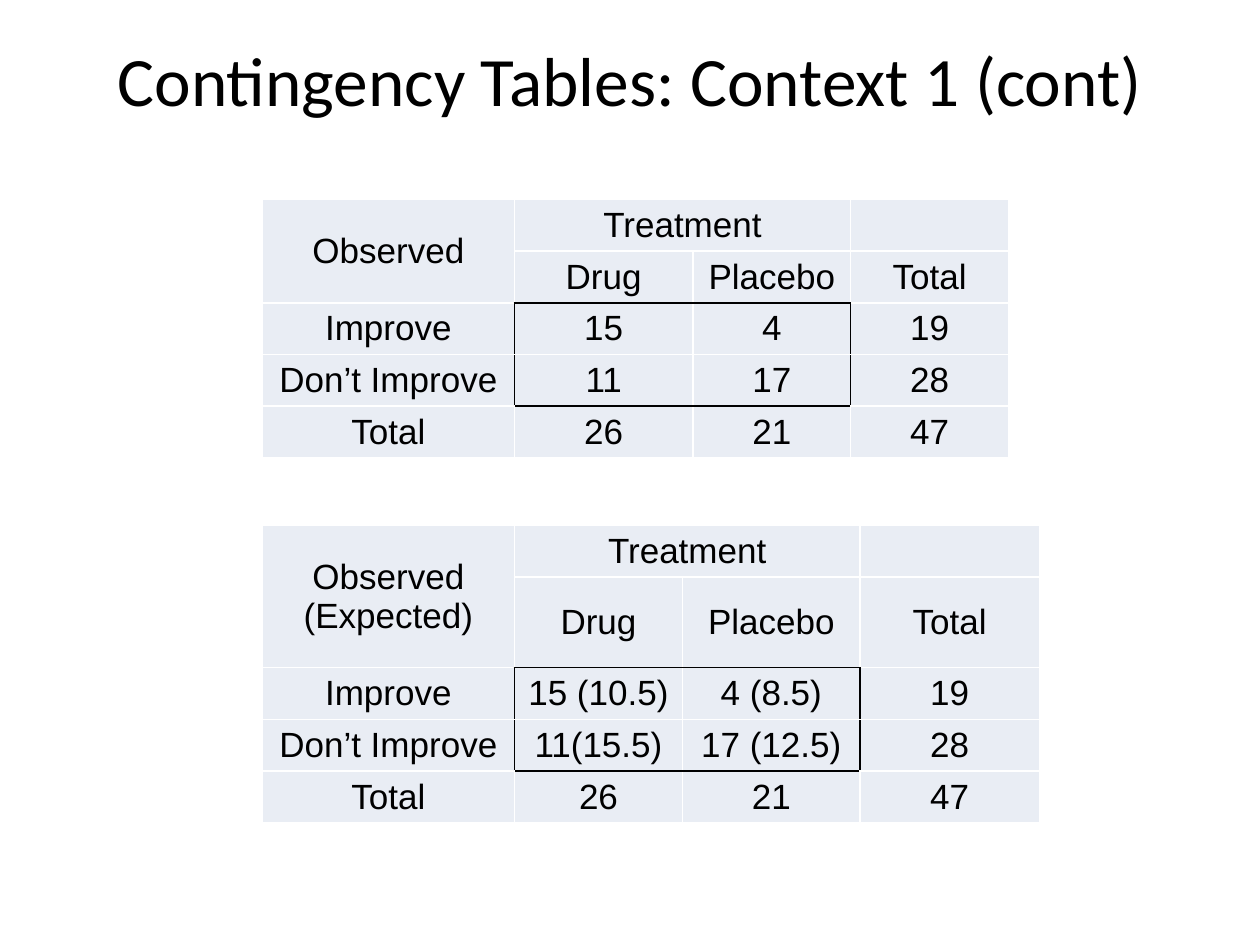
from lxml.etree import SubElement as Sub
from pptx import Presentation
from pptx.dml.color import RGBColor as RGB
from pptx.enum.text import MSO_ANCHOR as Anchor, PP_ALIGN as Align
from pptx.oxml.ns import qn
from pptx.util import Cm, Pt

COLORS = {"ink": "000000", "cell": "E9EDF4", "rule": "FFFFFF"}
SIDES = {"L": (0, -1), "R": (0, 1), "T": (-1, 0), "B": (1, 0)}
ROW = 1.04


def style(par, font, size):
    par.alignment = Align.CENTER
    par.font.name = font
    par.font.size = Pt(size)
    par.font.bold = False
    par.font.color.rgb = RGB.from_string(COLORS["ink"])


def add_title(slide, text, left, top, width, height):
    title = slide.shapes.title
    title.left, title.top = Cm(left), Cm(top)
    title.width, title.height = Cm(width), Cm(height)
    title.text_frame.text = text
    title.text_frame.vertical_anchor = Anchor.MIDDLE
    style(title.text_frame.paragraphs[0], "Calibri", 39.6)


def is_count(row, col):
    return row in (2, 3) and col in (1, 2)


def add_edges(cell, row, col):
    props = cell._tc.get_or_add_tcPr()
    for side, (down, right) in SIDES.items():
        framed = is_count(row, col) != is_count(row + down, col + right)
        line = Sub(props, qn(f"a:ln{side}"), w=str(Pt(1)))
        fill = Sub(line, qn("a:solidFill"))
        Sub(fill, qn("a:srgbClr"), val=COLORS["ink" if framed else "rule"])


def add_grid(slide, label, counts, left, top, widths):
    rows = [
        [label, "Treatment", "", ""],
        ["", "Drug", "Placebo", "Total"],
        ["Improve", *counts[0], "19"],
        ["Don’t Improve", *counts[1], "28"],
        ["Total", "26", "21", "47"],
    ]
    table = slide.shapes.add_table(
        len(rows), len(widths), Cm(left), Cm(top),
        Cm(sum(widths)), Cm(ROW * len(rows))).table
    table.first_row = table.horz_banding = False
    for col, width in zip(table.columns, widths):
        col.width = Cm(width)
    for r, texts in enumerate(rows):
        table.rows[r].height = Cm(ROW)
        for c, text in enumerate(texts):
            cell = table.cell(r, c)
            cell.text = text
            cell.vertical_anchor = Anchor.MIDDLE
            style(cell.text_frame.paragraphs[0], "Arial", 20)
            add_edges(cell, r, c)
            cell.fill.solid()
            cell.fill.fore_color.rgb = RGB.from_string(COLORS["cell"])
    table.cell(0, 0).merge(table.cell(1, 0))
    table.cell(0, 1).merge(table.cell(0, 2))


def main():
    deck = Presentation()
    deck.slide_width, deck.slide_height = Cm(25.4), Cm(19.05)
    slide = deck.slides.add_slide(deck.slide_layouts[5])
    add_title(slide, "Contingency Tables: Context 1 (cont)", 1.27, 0, 22.86, 3.18)
    add_grid(slide, "Observed", [("15", "4"), ("11", "17")],
             5.29, 4.02, [5.08, 3.6, 3.18, 3.18])
    add_grid(slide, "Observed (Expected)",
             [("15 (10.5)", "4 (8.5)"), ("11(15.5)", "17 (12.5)")],
             5.29, 10.59, [5.08, 3.39, 3.58, 3.61])
    deck.save("out.pptx")


if __name__ == "__main__":
    main()
